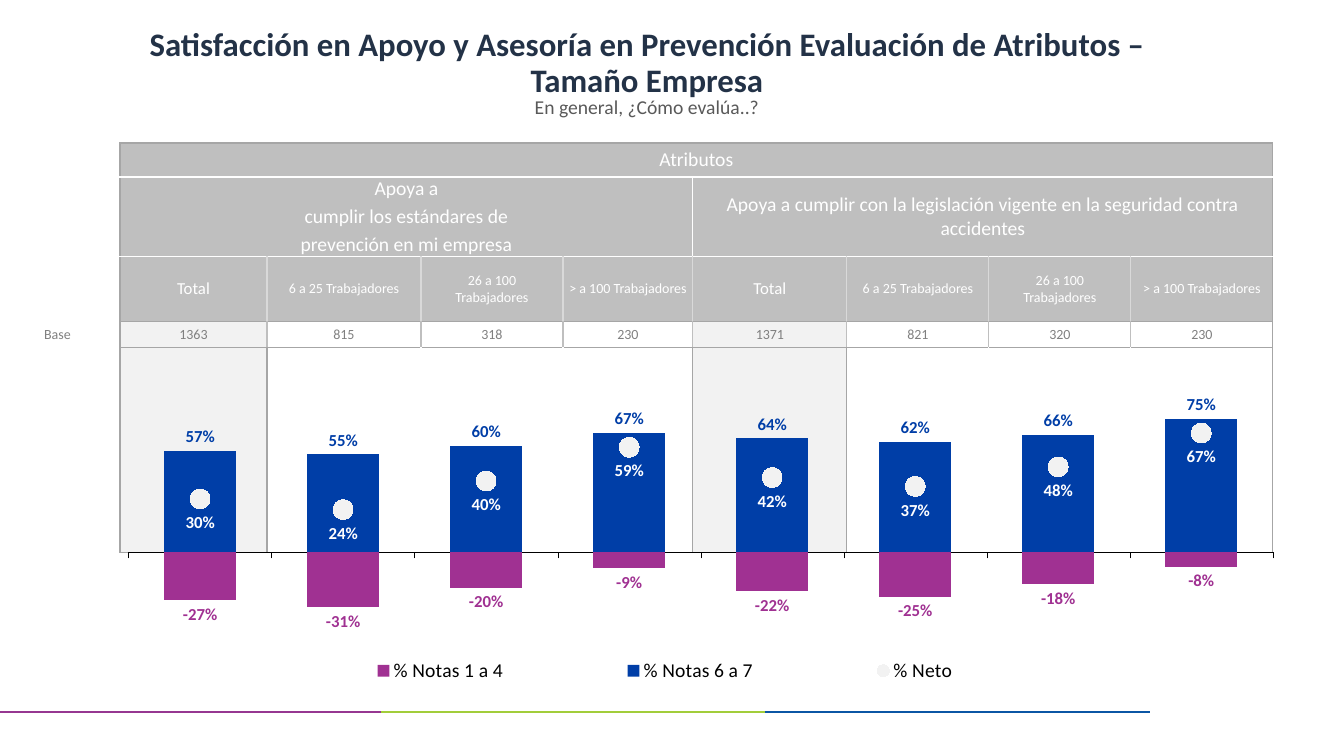
from dataclasses import dataclass

from lxml.etree import SubElement
from pptx import Presentation
from pptx.chart.data import CategoryChartData
from pptx.dml.color import RGBColor
from pptx.enum.chart import (XL_CHART_TYPE, XL_LABEL_POSITION, XL_LEGEND_POSITION,
                             XL_MARKER_STYLE, XL_TICK_LABEL_POSITION, XL_TICK_MARK)
from pptx.enum.shapes import MSO_CONNECTOR
from pptx.enum.text import MSO_ANCHOR, PP_ALIGN
from pptx.oxml import parse_xml
from pptx.oxml.ns import nsdecls, qn
from pptx.util import Emu, Pt


@dataclass(frozen=True)
class Theme:
    font: str = "Calibri"
    chart_font: str = "TeX Gyre Adventor"
    navy: str = "233247"
    subtitle: str = "595959"
    base: str = "808080"
    white: str = "FFFFFF"
    black: str = "000000"
    header: str = "BFBFBF"
    total: str = "F2F2F2"
    divider: str = "D9D9D9"
    edge: str = "A6A6A6"
    low: str = "A03192"
    high: str = "003EA7"
    footer: tuple = ("963791", "A2CD3A", "0B56A4")
    title_size: float = 23.4
    heading_size: int = 14
    label_size: int = 12
    small_size: int = 10


theme = Theme()
PX = 12700 * 72 / 100.8


def style(font, size, color, bold=False, name=theme.font):
    font.name, font.size, font.bold = name, Pt(size), bold
    font.color.rgb = RGBColor.from_string(color)


def place(parent, index, x, y, w, h):
    for old in parent.findall(qn("c:layout")):
        parent.remove(old)
    target = '<c:layoutTarget val="inner"/>' if index == 0 else ""
    parent.insert(index, parse_xml(
        f'<c:layout {nsdecls("c")}><c:manualLayout>{target}'
        '<c:xMode val="edge"/><c:yMode val="edge"/>'
        f'<c:x val="{x}"/><c:y val="{y}"/><c:w val="{w}"/><c:h val="{h}"/>'
        '</c:manualLayout></c:layout>'))


deck = Presentation()
deck.slide_width, deck.slide_height = Emu(round(1344 * PX)), Emu(round(756 * PX))
page = deck.slides.add_slide(deck.slide_layouts[6])

for (start, end), color in zip([(0, 384), (381, 765), (765, 1150)], theme.footer):
    x1, x2, y = (Emu(round(n * PX)) for n in (start, end, 712))
    rule = page.shapes.add_connector(MSO_CONNECTOR.STRAIGHT, x1, y, x2, y)
    rule.line.color.rgb = RGBColor.from_string(color)
    rule.line.width = Pt(1.5)
    SubElement(rule.element.spPr, qn("a:effectLst"))

widths = [125, 147, 154, 142, 130, 154, 142, 142, 142]
heights = [34, 79, 65, 26, 205]
sizes = ["Total", "6 a 25 Trabajadores", "26 a 100 Trabajadores", "> a 100 Trabajadores"]
bases = ["Base", "1363", "815", "318", "230", "1371", "821", "320", "230"]
texts = {
    (0, 1): "Atributos",
    (1, 1): "Apoya a\ncumplir los estándares de\nprevención en mi empresa",
    (1, 5): "Apoya a cumplir con la legislación vigente en la seguridad contra accidentes",
}
texts.update({(2, column): text for column, text in enumerate(sizes * 2, 1)})
texts.update({(3, column): text for column, text in enumerate(bases)})
inner_edges = [theme.header, theme.header, theme.divider, theme.header, theme.white]
accent_edges = {1: ({5}, theme.white), 4: ({2, 5, 6}, theme.edge)}
level_edges = [theme.edge, theme.white, theme.white, theme.edge, theme.edge, theme.edge]

frame = page.shapes.add_table(
    len(heights), len(widths),
    *(Emu(round(n * PX)) for n in (-5, 143, sum(widths), sum(heights))))
grid = frame.table
grid.first_row = grid.horz_banding = False
for column, width in zip(grid.columns, widths):
    column.width = Emu(round(width * PX))
for row, height in zip(grid.rows, heights):
    row.height = Emu(round(height * PX))
grid.cell(0, 1).merge(grid.cell(0, 8))
grid.cell(1, 1).merge(grid.cell(1, 4))
grid.cell(1, 5).merge(grid.cell(1, 8))

for r in range(len(heights)):
    special, accent = accent_edges.get(r, (set(), theme.white))
    verticals = [accent if c in special else inner_edges[r] for c in range(10)]
    verticals[0], verticals[1], verticals[9] = theme.white, theme.edge, theme.edge
    for c in range(len(widths)):
        cell = grid.cell(r, c)
        text = texts.get((r, c), "")
        right = c + (cell.span_width if cell.is_merge_origin else 1)
        top, bottom = level_edges[r:r + 2] if c else (theme.white, theme.white)
        properties = cell._tc.get_or_add_tcPr()
        for side, color in zip("LRTB", (verticals[c], verticals[right], top, bottom)):
            border = SubElement(properties, qn(f"a:ln{side}"), w=str(Pt(1)))
            SubElement(SubElement(border, qn("a:solidFill")), qn("a:srgbClr"), val=color)
        fill = theme.header if r < 3 else theme.total if c in (1, 5) else None
        if c and fill:
            cell.fill.solid()
            cell.fill.fore_color.rgb = RGBColor.from_string(fill)
        else:
            cell.fill.background()
        cell.vertical_anchor = MSO_ANCHOR.MIDDLE
        cell.margin_top = cell.margin_bottom = 0
        side_margin = 20 if text == sizes[2] else 2
        cell.margin_left = cell.margin_right = Emu(round(side_margin * PX))
        if not text:
            continue
        size = (theme.heading_size if r < 2
                else theme.label_size if text == "Total" else theme.small_size)
        cell.text_frame.text = text
        for index, para in enumerate(cell.text_frame.paragraphs):
            para.alignment = PP_ALIGN.CENTER
            if index:
                para.space_before = Pt(size * 0.2)
            for span in para.runs:
                style(span.font, size, theme.base if r == 3 else theme.white)

data = CategoryChartData(number_format="0%")
data.categories = [str(n) for n in range(1, 9)]
data.add_series("% Notas 1 a 4", [-0.27, -0.31, -0.2, -0.09, -0.22, -0.25, -0.18, -0.08])
data.add_series("% Notas 6 a 7", [0.57, 0.55, 0.6, 0.67, 0.64, 0.62, 0.66, 0.75])
data.add_series("% Neto", [0.3, 0.24, 0.4, 0.59, 0.42, 0.37, 0.48, 0.67])
chart = page.shapes.add_chart(
    XL_CHART_TYPE.COLUMN_CLUSTERED,
    *(Emu(round(n * PX)) for n in (81, 332, 1192, 385)), data).chart
style(chart.font, 13.7, theme.black, True, theme.chart_font)
chart.has_title = False

bars = chart.plots[0]
bars.gap_width, bars.overlap, bars.vary_by_categories = 100, 100, False
bar_xml = bars._element
line_xml = parse_xml(
    f'<c:lineChart {nsdecls("c")}><c:grouping val="standard"/><c:varyColors val="0"/>'
    '<c:marker val="1"/></c:lineChart>')
net_xml = bar_xml.findall(qn("c:ser"))[2]
for inversion in net_xml.findall(qn("c:invertIfNegative")):
    net_xml.remove(inversion)
line_xml.insert(2, net_xml)
for axis_id in bar_xml.findall(qn("c:axId")):
    SubElement(line_xml, qn("c:axId"), val=axis_id.get("val"))
bar_xml.addnext(line_xml)

low, high = chart.plots[0].series
net = chart.plots[1].series[0]
for series, color in ((low, theme.low), (high, theme.high)):
    series.invert_if_negative = False
    series.format.fill.solid()
    series.format.fill.fore_color.rgb = RGBColor.from_string(color)
net.smooth = False
net.format.line.fill.background()
net.marker.style, net.marker.size = XL_MARKER_STYLE.CIRCLE, 14
net.marker.format.fill.solid()
net.marker.format.fill.fore_color.rgb = RGBColor.from_string(theme.total)
net.marker.format.line.color.rgb = RGBColor.from_string(theme.total)
for series, color, position in (
        (low, theme.low, XL_LABEL_POSITION.OUTSIDE_END),
        (high, theme.high, XL_LABEL_POSITION.OUTSIDE_END),
        (net, theme.white, XL_LABEL_POSITION.BELOW)):
    labels = series.data_labels
    labels.show_value, labels.position = True, position
    labels.number_format, labels.number_format_is_linked = "0%", False
    style(labels.font, theme.label_size, color, True)

values = chart.value_axis
values.minimum_scale, values.maximum_scale, values.major_unit = -0.6, 1, 0.2
values.has_major_gridlines = values.visible = False
categories = chart.category_axis
categories.tick_label_position = XL_TICK_LABEL_POSITION.NONE
categories.major_tick_mark = XL_TICK_MARK.OUTSIDE
categories.format.line.color.rgb = RGBColor.from_string(theme.black)
categories.format.line.width = Pt(0.25)

chart.has_legend = True
legend = chart.legend
legend.position, legend.include_in_layout = XL_LEGEND_POSITION.LEFT, False
style(legend.font, theme.heading_size, theme.black)
place(legend._element, 1, 0.15, 0.83, 0.68, 0.1)
place(bar_xml.getparent(), 0, 0.04, 0.11, 0.96, 0.74)

for text, top, height, size, color, bold, anchor, spacing in (
        ("Satisfacción en Apoyo y Asesoría en Prevención Evaluación de Atributos – Tamaño Empresa",
         33, 62, theme.title_size, theme.navy, True, MSO_ANCHOR.MIDDLE, 0.9),
        ("En general, ¿Cómo evalúa..?",
         90, 57, theme.heading_size, theme.subtitle, False, MSO_ANCHOR.TOP, 1.0)):
    box = page.shapes.add_textbox(*(Emu(round(n * PX)) for n in (103, top, 1088, height)))
    box.text_frame.word_wrap = True
    box.text_frame.vertical_anchor = anchor
    box.text_frame.text = text
    para = box.text_frame.paragraphs[0]
    para.alignment, para.line_spacing = PP_ALIGN.CENTER, spacing
    style(para.runs[0].font, size, color, bold)

deck.save("out.pptx")
